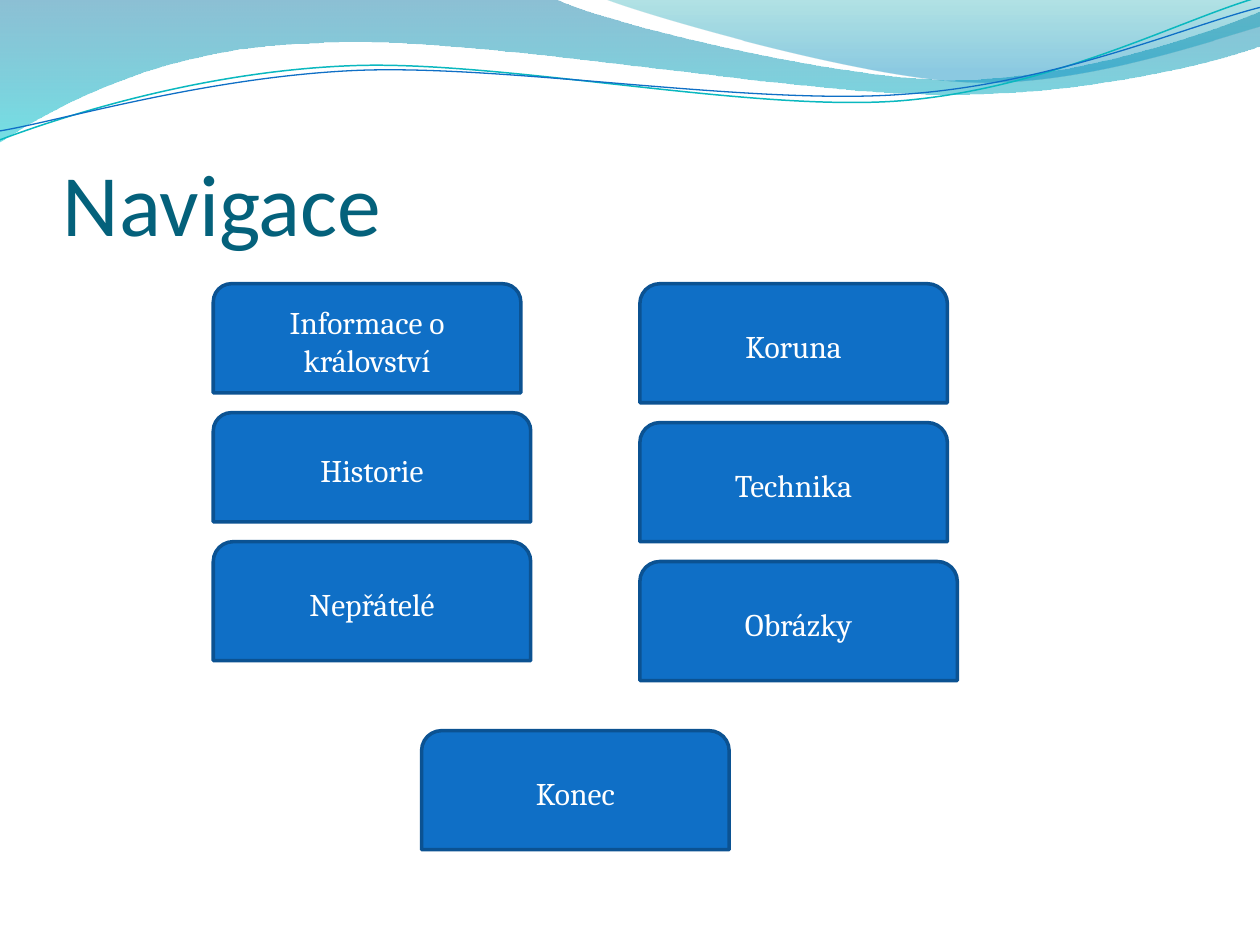
from lxml.etree import SubElement
from pptx import Presentation
from pptx.dml.color import RGBColor
from pptx.enum.shapes import MSO_SHAPE
from pptx.enum.text import MSO_ANCHOR, PP_ALIGN
from pptx.oxml.ns import qn
from pptx.util import Cm, Pt

COLORS = {
    "title": "04617B", "button": "0F6FC6", "border": "0B5292", "text": "FFFFFF",
    "teal_line": "0AB8BF", "blue_line": "0F6FC6",
    "wave_top": "0074A1", "wave_bottom": "00C6CF",
    "crest_top": "00A1A9", "crest_bottom": "008BBF",
}

# Outlines in cm: a start point, then segments of one point (line)
# or three points (Bézier curve).
WAVE = [(0, 0), [(11.18, -0.03)],
        [(12.09, 0.43), (16.87, 1.6), (19.25, 1.6)],
        [(21.67, 1.6), (24.33, 0.66), (25.4, 0.23)],
        [(25.43, 0.91)],
        [(24.97, 1.12), (22.1, 1.93), (18.95, 1.9)],
        [(15.8, 1.9), (9.7, 0.71), (6.53, 0.86)],
        [(3.28, 0.91), (1.17, 2.11), (-0.03, 2.87)]]
CREST = [(12.17, -0.03),
         [(12.93, 0.28), (17.32, 1.57), (19.53, 1.65)],
         [(21.74, 1.75), (24.41, 0.81), (25.4, 0.53)],
         [(25.4, 0)]]
# The two thin curves are drawn level and then tilted
TEAL_LINE = [(-0.05, 2.22),
             [(1.19, 1.82), (4.02, 1.04), (7.05, 1.06)],
             [(10.05, 1.07), (15.02, 2.37), (18.08, 2.29)],
             [(21.13, 2.2), (23.87, 0.91), (25.41, 0.55)]]
BLUE_LINE = [(-0.04, 2.04),
             [(1.16, 1.9), (4.18, 1.15), (7.2, 1.16)],
             [(10.25, 1.18), (15.13, 2.25), (18.19, 2.16)],
             [(21.21, 2.1), (23.93, 1.06), (25.45, 0.75)]]
TILT = 357.3

# Each group: left, button height, first top, (label, width) from top to bottom
BUTTON_GROUPS = [
    (4.3, 2.2, 5.72, [("Informace o království", 6.2), ("Historie", 6.4)]),
    (12.9, 2.4, 5.72, [("Koruna", 6.2), ("Technika", 6.2), ("Obrázky", 6.4)]),
    (8.5, 2.4, 14.73, [("Konec", 6.2)]),
    (4.3, 2.4, 10.92, [("Nepřátelé", 6.4)]),
]
GAP = 0.4


def rgb(name):
    return RGBColor.from_string(COLORS[name])


def set_attrs(obj, values):
    for name, value in values.items():
        setattr(obj, name, value)


def add_outline(s, outline, close):
    """Add a freeform whose three-point segments become Bézier curves."""
    start, *segments = outline
    builder = s.shapes.build_freeform(Cm(start[0]), Cm(start[1]))
    builder.add_line_segments([(Cm(x), Cm(y)) for seg in segments for x, y in seg],
                              close=close)
    sp = builder.convert_to_shape()
    sp.shadow.inherit = False
    route = next(sp._element.iter(qn("a:path")))
    lines = iter(route.findall(qn("a:lnTo")))
    for seg in segments:
        steps = [next(lines) for _ in seg]
        if len(seg) == 3:
            curve = route.makeelement(qn("a:cubicBezTo"))
            steps[0].addprevious(curve)
            for step in steps:
                curve.append(step[0])
                route.remove(step)
    return sp


def add_wave(s, outline, stops):
    """Add a closed area with a top-to-bottom gradient of (colour, position, alpha)."""
    sp = add_outline(s, outline, True)
    sp.line.fill.background()
    sp.fill.gradient()
    sp.fill.gradient_angle = 270
    for stop, (color, position, _) in zip(sp.fill.gradient_stops, stops):
        stop.color.rgb = rgb(color)
        stop.position = position
    for clr, (_, _, alpha) in zip(sp._element.spPr.iter(qn("a:srgbClr")), stops):
        SubElement(clr, qn("a:alpha"), val=str(alpha * 1000))


def add_curve(s, outline, color, width):
    sp = add_outline(s, outline, False)
    sp.rotation = TILT
    sp.fill.background()
    sp.line.color.rgb = rgb(color)
    sp.line.width = Pt(width)


def write(tf, text, frame, font, color, align=PP_ALIGN.LEFT):
    set_attrs(tf, {"word_wrap": True, **frame})
    p = tf.paragraphs[0]
    p.alignment = align
    r = p.add_run()
    r.text = text
    set_attrs(r.font, font)
    r.font.color.rgb = rgb(color)


def add_title(s, text):
    box = s.shapes.add_textbox(Cm(1.27), Cm(1.96), Cm(22.86), Cm(3.17))
    frame = {"vertical_anchor": MSO_ANCHOR.BOTTOM, "margin_left": 0,
             "margin_right": 0, "margin_top": Cm(0.13), "margin_bottom": 0}
    write(box.text_frame, text, frame, {"name": "Calibri", "size": Pt(50)}, "title")


def add_button(s, text, left, top, width, height):
    sp = s.shapes.add_shape(MSO_SHAPE.ROUND_2_SAME_RECTANGLE,
                            Cm(left), Cm(top), Cm(width), Cm(height))
    sp.shadow.inherit = False
    sp.fill.solid()
    sp.fill.fore_color.rgb = rgb("button")
    sp.line.color.rgb = rgb("border")
    sp.line.width = Pt(2)
    write(sp.text_frame, text, {"vertical_anchor": MSO_ANCHOR.MIDDLE},
          {"name": "Cambria", "size": Pt(18)}, "text", PP_ALIGN.CENTER)


def main():
    prs = Presentation()
    set_attrs(prs, {"slide_width": Cm(25.4), "slide_height": Cm(19.05)})
    s = prs.slides.add_slide(prs.slide_layouts[6])
    add_wave(s, WAVE, [("wave_top", 0, 45), ("wave_bottom", 1, 55)])
    add_wave(s, CREST, [("crest_top", 0, 30), ("crest_bottom", 0.8, 45)])
    add_curve(s, TEAL_LINE, "teal_line", 0.85)
    add_curve(s, BLUE_LINE, "blue_line", 0.75)
    add_title(s, "Navigace")
    for left, height, top, buttons in BUTTON_GROUPS:
        for i, (text, width) in enumerate(buttons):
            add_button(s, text, left, top + i * (height + GAP), width, height)
    prs.save("out.pptx")


if __name__ == "__main__":
    main()
